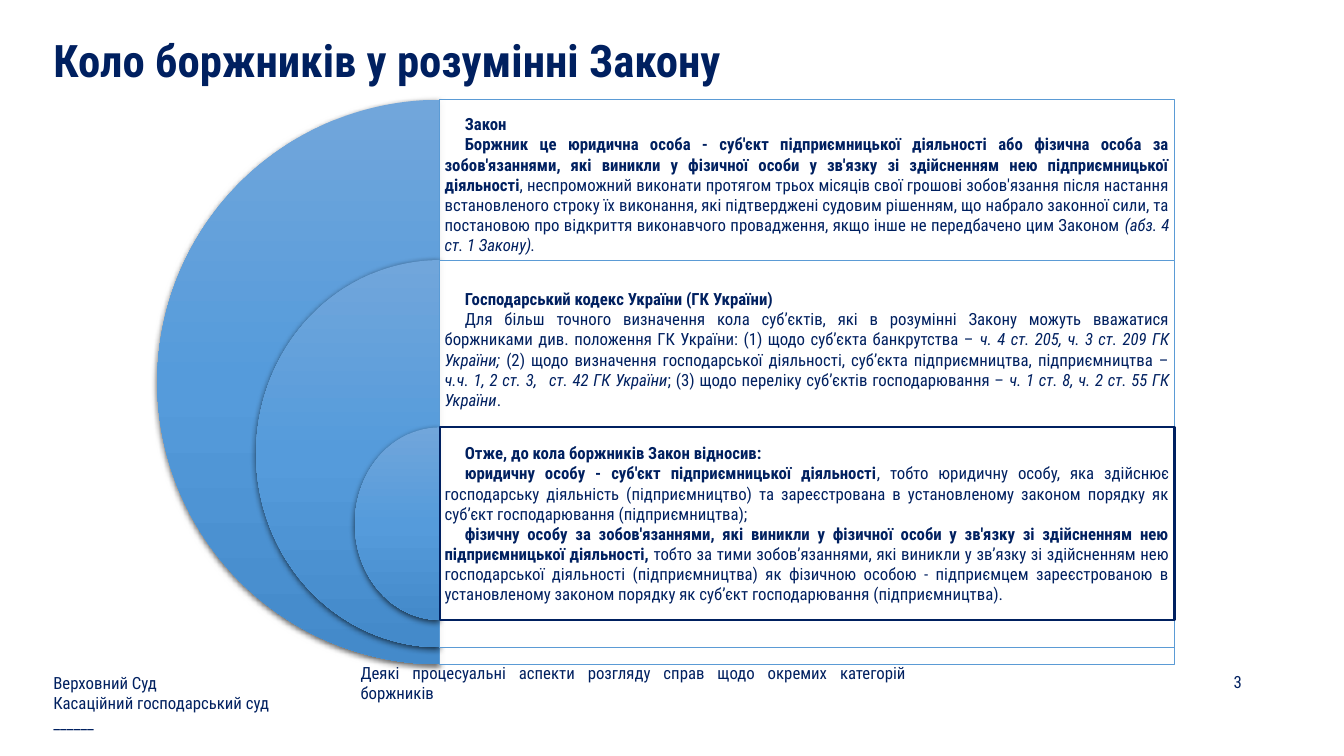
from copy import deepcopy
from lxml.etree import SubElement
from pptx import Presentation
from pptx.dml.color import RGBColor
from pptx.enum.shapes import MSO_SHAPE as Shape
from pptx.enum.text import MSO_ANCHOR as Anchor, MSO_AUTO_SIZE as Auto, PP_ALIGN as Align
from pptx.oxml.ns import qn
from pptx.util import Pt

NAVY = RGBColor(0x00, 0x20, 0x60)
BLUE = RGBColor(0x5B, 0x9B, 0xD5)
WHITE = RGBColor(0xFF, 0xFF, 0xFF)
BLACK = RGBColor(0, 0, 0)
SHADES = (RGBColor(0x71, 0xA6, 0xDB), RGBColor(0x55, 0x9B, 0xDB), RGBColor(0x44, 0x8A, 0xCA))
FONT = "Roboto Condensed"

# Each paragraph is a list of (text, style) runs; style "b" is bold, "i" italic.
LAW = [
    [("Закон", "b")],
    [("Боржник це юридична особа - суб'єкт підприємницької діяльності або фізична особа за "
      "зобов'язаннями, які виникли у фізичної особи у зв'язку зі здійсненням нею "
      "підприємницької діяльності", "b"),
     (", неспроможний виконати протягом трьох місяців свої грошові зобов'язання після настання "
      "встановленого строку їх виконання, які підтверджені судовим рішенням, що набрало законної "
      "сили, та постановою про відкриття виконавчого провадження, якщо інше не передбачено цим "
      "Законом ", ""),
     ("(абз. 4 ст. 1 Закону).", "i")],
]
CODE = [
    [("Господарський кодекс України (ГК України)", "b")],
    [("Для більш точного визначення кола суб’єктів, які в розумінні Закону можуть вважатися "
      "боржниками див. положення ГК України: (1) щодо суб’єкта банкрутства – ", ""),
     ("ч. 4 ст. 205, ч. 3 ст. 209 ГК України; ", "i"),
     ("(2) щодо визначення господарської діяльності, суб’єкта підприємництва, "
      "підприємництва – ", ""),
     ("ч.ч. 1, 2 ст. 3,\tст. 42 ГК України", "i"),
     ("; (3) щодо переліку суб’єктів господарювання – ", ""),
     ("ч. 1 ст. 8, ч. 2 ст. 55 ГК України", "i"),
     (".", "")],
]
RESULT = [
    [("Отже, до кола боржників Закон відносив:", "b")],
    [("юридичну особу - суб'єкт підприємницької діяльності", "b"),
     (", тобто юридичну особу, яка здійснює господарську діяльність (підприємництво) та "
      "зареєстрована в установленому законом порядку як суб’єкт господарювання "
      "(підприємництва);", "")],
    [("фізичну особу за зобов'язаннями, які виникли у фізичної особи у зв'язку зі здійсненням "
      "нею підприємницької діяльності, ", "b"),
     ("тобто за тими зобов’язаннями, які виникли у зв’язку зі здійсненням нею господарської "
      "діяльності (підприємництва) як фізичною особою - підприємцем зареєстрованою в "
      "установленому законом порядку як суб’єкт господарювання (підприємництва).", "")],
]
# Text, top, height, text height, line colour, line width
RINGS = [
    (LAW, 71.3, 403.2, 121, BLUE, 0.5),
    (CODE, 185.8, 276.5, 127.4, BLUE, 0.5),
    (RESULT, 305.3, 137.5, 137.5, NAVY, 1.5),
]


def place(shape, box):
    shape.left, shape.top, shape.width, shape.height = (Pt(v) for v in box)


def write(shape, paras, size=12, align=Align.LEFT, inset=None, indent=None, tab=None, space=None):
    frame = shape.text_frame
    frame.word_wrap = True
    frame.auto_size = Auto.NONE
    frame.vertical_anchor = Anchor.MIDDLE
    if inset is not None:
        frame.margin_left = frame.margin_right = Pt(inset)
        frame.margin_top = frame.margin_bottom = Pt(inset)
    for i, runs in enumerate(paras):
        para = frame.add_paragraph() if i else frame.paragraphs[0]
        para.alignment = align
        if space:
            para.line_spacing = space
        props = para._p.get_or_add_pPr()
        if indent:
            props.set("marL", "0")
            props.set("indent", str(Pt(indent)))
        if tab:
            stops = SubElement(props, qn("a:tabLst"))
            SubElement(stops, qn("a:tab"), pos=str(Pt(tab)), algn="l")
        for text, style in runs:
            run = para.add_run()
            run.text = text
            font = run.font
            font.name, font.size = FONT, Pt(size)
            font.color.rgb = NAVY
            font.bold, font.italic = "b" in style, "i" in style


def label(slide, box, paras, **style):
    shape = slide.shapes.add_textbox(*(Pt(v) for v in box))
    write(shape, paras, **style)


def half(slide, box):
    """Draw the left half of an ellipse, with a gradient and a soft shadow."""
    pie = slide.shapes.add_shape(Shape.PIE, *(Pt(v) for v in box))
    pie.adjustments[0], pie.adjustments[1] = 54, 162
    pie.line.fill.background()
    fill = pie.fill
    fill.gradient()
    fill.gradient_angle = 270
    stops = pie._element.spPr.find(".//" + qn("a:gsLst"))
    stops.insert(1, deepcopy(stops[0]))
    for i, (stop, shade) in enumerate(zip(fill.gradient_stops, SHADES)):
        stop.position = i / 2
        stop.color.rgb = shade
    pie.shadow.inherit = False
    effect = pie._element.spPr.find(qn("a:effectLst"))
    shadow = SubElement(effect, qn("a:outerShdw"), blurRad=str(Pt(4.5)), dist=str(Pt(1.5)),
                        dir="5400000", algn="ctr", rotWithShape="0")
    color = SubElement(shadow, qn("a:srgbClr"), val=str(BLACK))
    SubElement(color, qn("a:alpha"), val="63000")


def panel(slide, box, color, width):
    rect = slide.shapes.add_shape(Shape.RECTANGLE, *(Pt(v) for v in box))
    rect.shadow.inherit = False
    rect.fill.solid()
    rect.fill.fore_color.rgb = WHITE
    tint = rect._element.spPr.find(qn("a:solidFill"))[0]
    SubElement(tint, qn("a:alpha"), val="90000")
    rect.line.color.rgb = color
    rect.line.width = Pt(width)


def target(slide, left, width):
    """Stack the half rings on the left edge of their text panels."""
    outer, step = 403.2, 141.1
    for i, (paras, top, height, depth, color, line) in enumerate(RINGS):
        span = outer - i * step
        half(slide, (left - span / 2, top, span, height))
        panel(slide, (left, top, width, height), color, line)
        label(slide, (left, top, width, depth), paras, align=Align.JUSTIFY,
              inset=3.6, indent=14.4, tab=86 if paras is CODE else None)


def footer(slide, top):
    court = ("Верховний Суд", "Касаційний господарський суд", "______")
    topic = "Деякі процесуальні аспекти розгляду справ щодо окремих категорій боржників"
    label(slide, (31, top, 183, 54), [[(line, "")] for line in court])
    label(slide, (250.5, top, 404, 25), [[(topic, "")]], align=Align.JUSTIFY)
    label(slide, (678.2, top, 216, 24), [[("3", "")]], align=Align.RIGHT)


def main():
    deck = Presentation()
    deck.slide_width, deck.slide_height = Pt(960), Pt(540)
    slide = deck.slides.add_slide(deck.slide_layouts[5])
    title = slide.shapes.title
    place(title, (31, 18.7, 889, 52.6))
    write(title, [[("Коло боржників у розумінні Закону", "b")]], size=32, space=0.9)
    footer(slide, 475.2)
    target(slide, 314, 525)
    deck.save("out.pptx")


if __name__ == "__main__":
    main()
